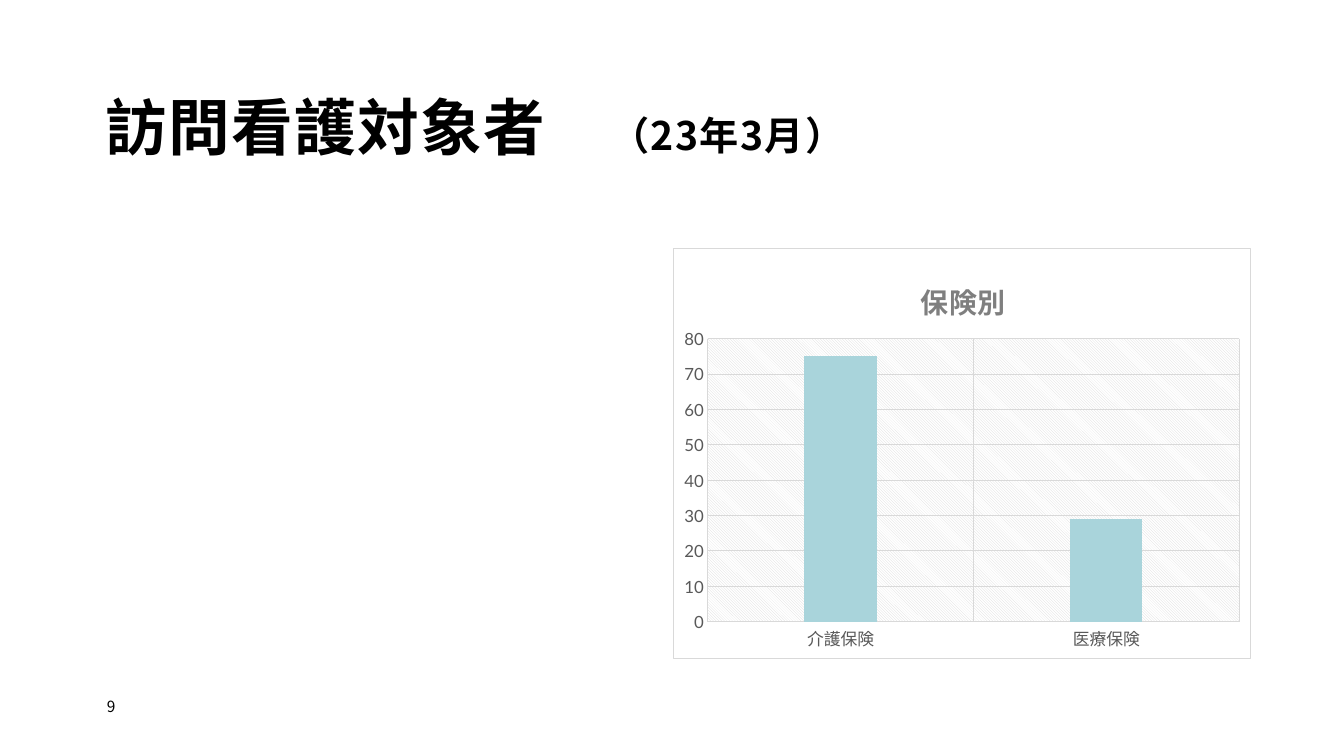
from lxml import etree
from pptx import Presentation
from pptx.chart.data import CategoryChartData
from pptx.dml.color import RGBColor
from pptx.enum.chart import XL_CHART_TYPE as ChartType, XL_TICK_MARK as TickMark
from pptx.enum.text import MSO_ANCHOR as Anchor
from pptx.oxml import parse_xml
from pptx.oxml.ns import nsdecls, qn
from pptx.util import Inches, Pt


def color(value):
    return RGBColor.from_string(value)


class SlideWriter:
    """Hold the style and current slide, placing elements by percent of its size."""

    text_font = "Noto Sans CJK JP"
    chart_font = "Lato"
    ink, white, rule = "000000", "FFFFFF", "D9D9D9"
    label, heading, bar = "595959", "7F7F7F", "A9D4DB"

    def __init__(self):
        self.deck = Presentation()
        self.deck.slide_width, self.deck.slide_height = Inches(13.33), Inches(7.5)
        self.page = self.deck.slides.add_slide(self.deck.slide_layouts[6])

    def area(self, left, top, width, height):
        wide, high = self.deck.slide_width / 100, self.deck.slide_height / 100
        return int(left * wide), int(top * high), int(width * wide), int(height * high)

    def style(self, font, size, ink, name, bold=False):
        font.size, font.name, font.bold = Pt(size), name, bold
        font.color.rgb = color(ink)

    def text(self, place, spans, bold=False, spacing=0, line=1.0, anchor=Anchor.TOP):
        box = self.page.shapes.add_textbox(*self.area(*place))
        frame = box.text_frame
        frame.word_wrap, frame.vertical_anchor = True, anchor
        frame.margin_left = frame.margin_right = 0
        frame.margin_top = frame.margin_bottom = 0
        para = frame.paragraphs[0]
        para.line_spacing = line
        for words, size in spans:
            span = para.add_run()
            span.text = words
            self.style(span.font, size, self.ink, self.text_font, bold)
            props = span.font._element
            props.set("spc", str(spacing * 100))
            east = etree.Element(qn("a:ea"), typeface=self.text_font)
            props.find(qn("a:latin")).addnext(east)

    def outline(self, line):
        line.color.rgb, line.width = color(self.rule), Pt(0.75)

    def arrange(self, part, position, **shares):
        old = part.find(qn("c:layout"))
        if old is not None:
            part.remove(old)
        target = '<c:layoutTarget val="inner"/>' if "w" in shares else ""
        modes = "".join(f'<c:{key}Mode val="edge"/>' for key in "xy")
        values = "".join(f'<c:{key} val="{share}"/>' for key, share in shares.items())
        part.insert(position, parse_xml(
            f'<c:layout {nsdecls("c")}><c:manualLayout>{target}{modes}{values}'
            '</c:manualLayout></c:layout>'))

    def backdrop(self, fill, line):
        return parse_xml(
            f'<c:spPr {nsdecls("c", "a")}>{fill}<a:ln w="9525">{line}</a:ln></c:spPr>')

    def solid(self, value):
        return f'<a:solidFill><a:srgbClr val="{value}"/></a:solidFill>'

    def columns(self, place, title, values):
        data = CategoryChartData()
        data.categories = list(values)
        data.add_series("Series 1", list(values.values()))
        chart = self.page.shapes.add_chart(
            ChartType.COLUMN_CLUSTERED, *self.area(*place), data).chart
        chart.has_legend = False
        self.style(chart.font, 12, self.label, self.chart_font)

        chart.has_title = True
        frame = chart.chart_title.text_frame
        frame.text = title
        self.style(frame.paragraphs[0].font, 20, self.heading, self.chart_font, True)
        self.arrange(chart.chart_title.element, 1, x=0.42, y=0.06)

        for axis in (chart.category_axis, chart.value_axis):
            axis.major_tick_mark = axis.minor_tick_mark = TickMark.NONE
            self.style(axis.tick_labels.font, 12, self.label, self.chart_font)
            axis.has_major_gridlines = True
            self.outline(axis.major_gridlines.format.line)
        self.outline(chart.category_axis.format.line)
        scale = chart.value_axis
        scale.format.line.fill.background()
        scale.minimum_scale, scale.maximum_scale, scale.major_unit = 0, 80, 10

        plot = chart.plots[0]
        plot.vary_by_categories, plot.gap_width, plot.overlap = False, 267, -43
        fill = plot.series[0].format.fill
        fill.solid()
        fill.fore_color.rgb = color(self.bar)

        root = chart.element
        plot_area = root.find(qn("c:chart")).find(qn("c:plotArea"))
        self.arrange(plot_area, 0, x=0.06, y=0.22, w=0.92, h=0.69)
        pattern = (f'<a:pattFill prst="ltDnDiag"><a:fgClr><a:srgbClr val="{self.rule}"/>'
                   f'</a:fgClr><a:bgClr><a:srgbClr val="{self.white}"/></a:bgClr></a:pattFill>')
        plot_area.append(self.backdrop(pattern, "<a:noFill/>"))
        root.find(qn("c:chart")).addnext(
            self.backdrop(self.solid(self.white), self.solid(self.rule)))


def main():
    writer = SlideWriter()
    writer.text((7.88, 12.8, 66.32, 8.93), [("訪問看護対象者　", 44), ("（23年3月）", 28)],
                bold=True, spacing=1, line=0.9, anchor=Anchor.BOTTOM)
    writer.text((7.95, 92.27, 4.28, 3.6), [("9", 11)])
    writer.columns((50.04, 32.8, 43.06, 54.4), "保険別", {"介護保険": 75, "医療保険": 29})
    writer.deck.save("out.pptx")


if __name__ == "__main__":
    main()
